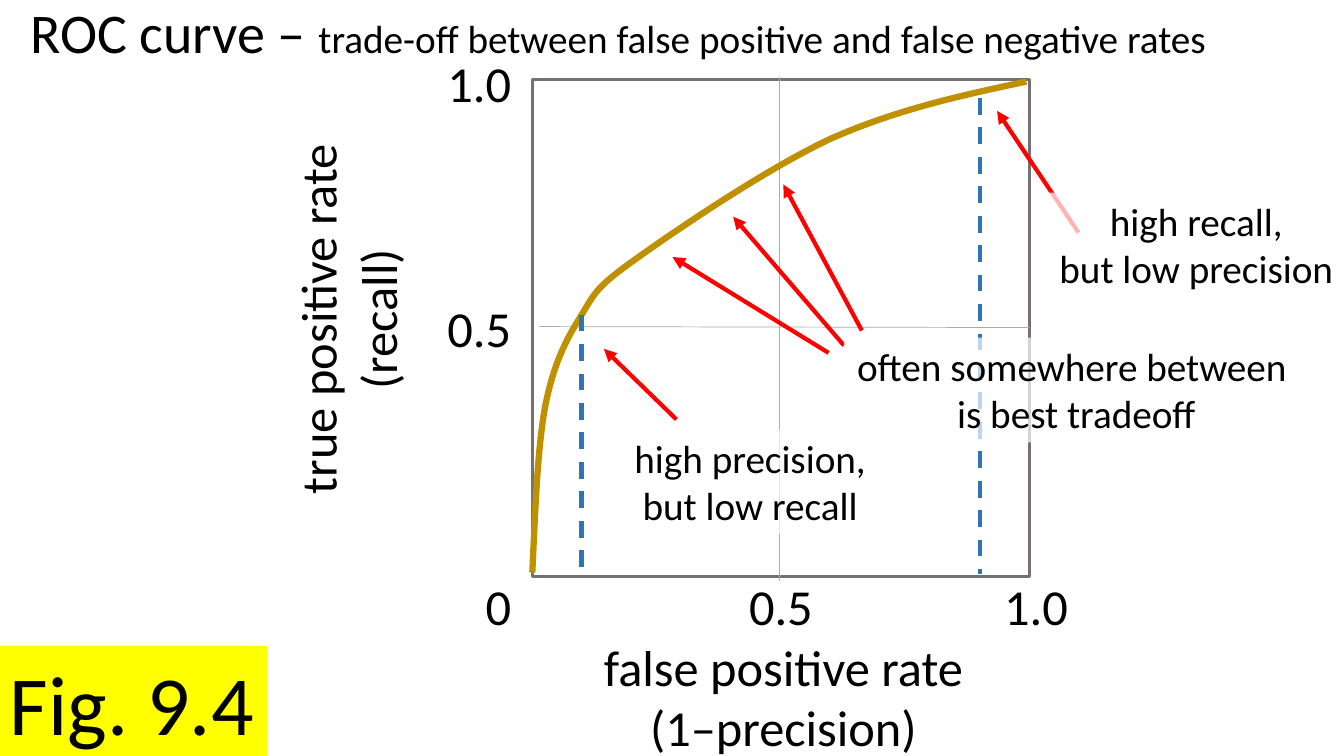
"""Builds the ROC curve slide with its trade-off notes."""
from lxml.etree import SubElement
from pptx import Presentation
from pptx.dml.color import RGBColor
from pptx.enum.dml import MSO_LINE
from pptx.enum.shapes import MSO_CONNECTOR as Conn, MSO_SHAPE as Shape
from pptx.enum.text import MSO_ANCHOR as Anchor, PP_ALIGN as Align
from pptx.oxml.ns import qn
from pptx.util import Inches, Pt

COLORS = {"text": "000000", "frame": "767171", "grid": "AFABAB",
          "curve": "BF9000", "cutoff": "2E75B6", "arrow": "FF0000",
          "note": "FFFFFF", "label": "FFFF00"}
PLOT = (39.61, 10.53, 36.98, 65.73)
CURVE = [(99.4, 99.6),
         (86.2, 96.8), (73, 93.9), (59.8, 88),
         (46.9, 81.9), (29.4, 70), (21.1, 64.1),
         (12.8, 58.2), (12.8, 57.4), (9.7, 52.3),
         (6.7, 47.5), (4.3, 42.8), (2.6, 34.3),
         (1, 25.6), (0.6, 13.2), (0, 0.8)]
GRID = [((49.7, 100.6), (49.7, -1)), ((1.4, 50.3), (100, 50.1))]
CUTOFFS = [((9.9, 52.7), (9.9, 0.8)), ((90.1, 96.3), (90.1, 0.6))]
ARROWS = [((29, 31.6), (14.4, 45.8)), ((109.9, 69.2), (93.5, 93.7)),
          ((59.6, 45), (28.2, 64.3)), ((62.7, 46.5), (40.4, 72.4)),
          ((66.3, 49.5), (50.5, 78.9))]
TICKS = [("0", 32.48, 75.47, Align.RIGHT), ("0.5", 32.48, 38.67, Align.RIGHT),
         ("1.0", 32.48, 6.27, Align.RIGHT), ("0.5", 54.99, 75.47, Align.LEFT),
         ("1.0", 73.97, 75.47, Align.LEFT)]
AXES = [("false positive rate\n(1–precision)", (44.04, 83.47, 28.51, 17.47), 0),
        ("true positive rate\n(recall)", (11.93, 33.47, 27.83, 17.47), 270)]
NOTES = [("high recall,\vbut low precision", (77.94, 25.47, 22.13, 13.87)),
         ("high precision,\vbut low recall", (46.36, 56.8, 18.9, 13.87)),
         ("often somewhere between\n is best tradeoff", (62.79, 44.67, 33.91, 13.87))]


def bezier(points, steps=16):
    """Return points along a chain of cubic curves."""
    out = [points[0]]
    for i in range(0, len(points) - 1, 3):
        a, b, c, d = points[i:i + 4]
        for k in range(1, steps + 1):
            t = k / steps
            w = ((1 - t) ** 3, 3 * t * (1 - t) ** 2, 3 * t * t * (1 - t), t ** 3)
            out.append(tuple(sum(f * q[axis] for f, q in zip(w, (a, b, c, d)))
                             for axis in (0, 1)))
    return out


class Deck:
    """Holds the style and the slide; boxes are in percent of the slide."""

    def __init__(self, font="Calibri"):
        self.prs = Presentation()
        self.prs.slide_width, self.prs.slide_height = Inches(13.33), Inches(7.5)
        self.s = self.prs.slides.add_slide(self.prs.slide_layouts[5])
        self.font = font

    def box(self, x, y, w, h):
        """Turn percent of the slide into lengths."""
        sw, sh = self.prs.slide_width, self.prs.slide_height
        return [round(v * side / 100) for v, side in zip((x, y, w, h), (sw, sh, sw, sh))]

    def point(self, fpr, tpr):
        """Turn percent rates on the plot into a position."""
        x, y, w, h = self.box(*PLOT)
        return round(x + w * fpr / 100), round(y + h * (1 - tpr / 100))

    def color(self, name):
        """Look up a colour."""
        return RGBColor.from_string(COLORS[name])

    def style(self, r, size):
        """Format the font of a run or paragraph."""
        fmt = {"name": self.font, "size": Pt(size), "bold": False}
        for key, value in fmt.items():
            setattr(r.font, key, value)
        r.font.color.rgb = self.color("text")

    def stroke(self, sp, color, width, dash=None):
        """Format an outline."""
        sp.line.color.rgb = self.color(color)
        for key, value in {"width": Pt(width), "dash_style": dash}.items():
            setattr(sp.line, key, value)

    def title(self, parts, box):
        """Fill the title placeholder with runs of different sizes."""
        sp = self.s.shapes.title
        for key, value in zip(("left", "top", "width", "height"), self.box(*box)):
            setattr(sp, key, value)
        sp.text_frame.vertical_anchor = Anchor.TOP
        p = sp.text_frame.paragraphs[0]
        for key, value in {"alignment": Align.LEFT, "line_spacing": 0.9}.items():
            setattr(p, key, value)
        for text, size in parts:
            r = p.add_run()
            r.text = text
            self.style(r, size)

    def frame(self):
        """Draw the plot border."""
        sp = self.s.shapes.add_shape(Shape.RECTANGLE, *self.box(*PLOT))
        sp.shadow.inherit = False
        sp.fill.background()
        self.stroke(sp, "frame", 2.25)

    def line(self, start, end, color, width, dash=None, arrow=False):
        """Draw a straight line between two rates."""
        cx = self.s.shapes.add_connector(Conn.STRAIGHT, *self.point(*start), *self.point(*end))
        self.stroke(cx, color, width, dash)
        if arrow:
            SubElement(cx.line._get_or_add_ln(), qn("a:tailEnd"), type="triangle")
        SubElement(cx._element.spPr, qn("a:effectLst"))

    def curve(self, points, color, width):
        """Draw a smooth open curve through rates."""
        path_points = [self.point(*q) for q in bezier(points)]
        ff = self.s.shapes.build_freeform(*path_points[0])
        ff.add_line_segments(path_points[1:], close=False)
        sp = ff.convert_to_shape()
        sp.shadow.inherit = False
        sp.fill.background()
        self.stroke(sp, color, width)

    def text(self, text, box, size, align=Align.CENTER, fill=None, alpha=None, turn=0):
        """Write a text box, filled or turned if asked."""
        sp = self.s.shapes.add_textbox(*self.box(*box))
        sp.rotation = turn
        if fill:
            sp.fill.solid()
            sp.fill.fore_color.rgb = self.color(fill)
        if alpha:
            clr = sp._element.spPr.find(".//" + qn("a:srgbClr"))
            SubElement(clr, qn("a:alpha"), val=str(alpha * 1000))
        tf = sp.text_frame
        tf.word_wrap = False
        tf.text = text
        for p in tf.paragraphs:
            p.alignment = align
            for r in p.runs:
                self.style(r, size)


def main():
    """Compose and save the slide."""
    d = Deck()
    d.title([("ROC curve – ", 40),
             ("trade-off between false positive and false negative rates", 28)],
            (1.5, 0, 95.8, 22.8))
    d.frame()
    for ends in GRID:
        d.line(*ends, "grid", 0.5)
    d.curve(CURVE, "curve", 4.5)
    for text, box, turn in AXES:
        d.text(text, box, 36, turn=turn)
    for text, x, y, align in TICKS:
        d.text(text, (x, y, 6.3, 9.47), 36, align)
    for ends in CUTOFFS:
        d.line(*ends, "cutoff", 3, dash=MSO_LINE.DASH)
    for ends in ARROWS:
        d.line(*ends, "arrow", 3, arrow=True)
    for text, box in NOTES:
        d.text(text, box, 28, fill="note", alpha=70)
    d.text("Fig. 9.4", (0, 85.47, 19.88, 14.53), 60, Align.LEFT, fill="label")
    d.prs.save("out.pptx")


if __name__ == "__main__":
    main()
